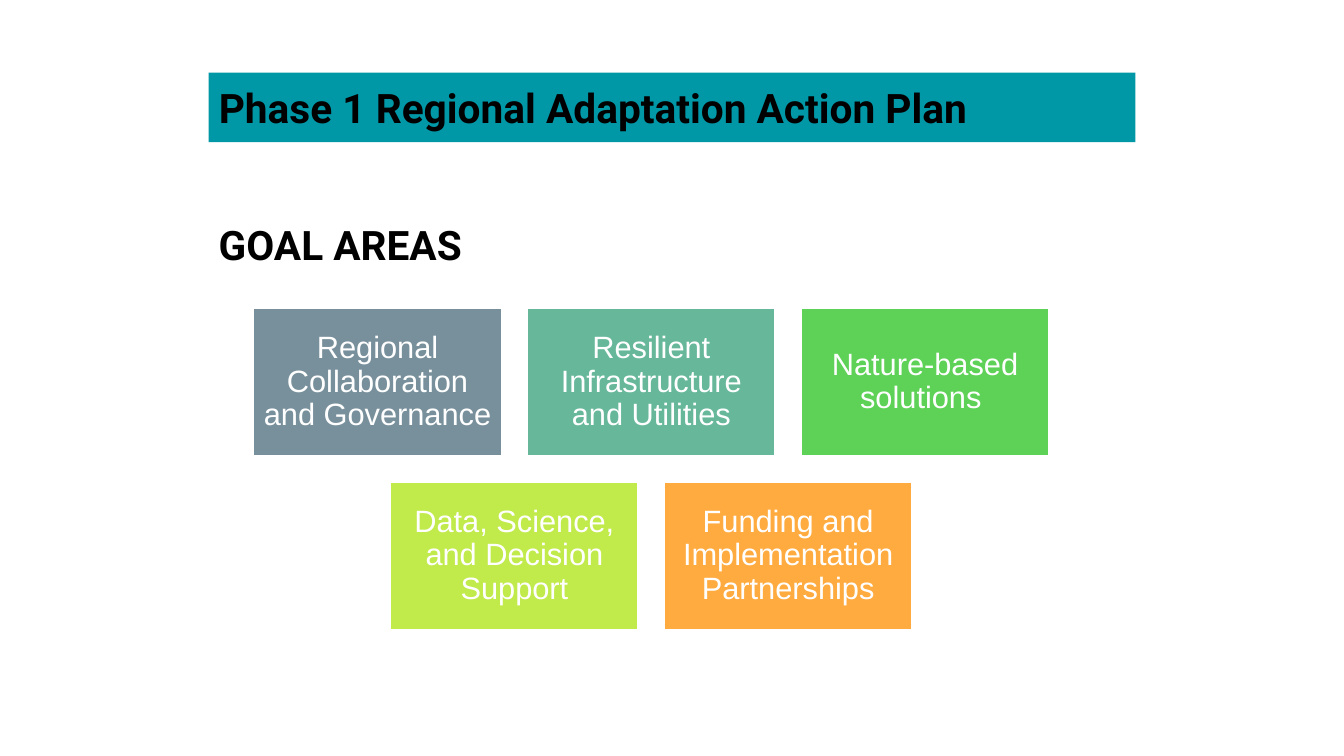
from pptx import Presentation
from pptx.dml.color import RGBColor
from pptx.enum.shapes import MSO_SHAPE
from pptx.enum.text import MSO_ANCHOR, PP_ALIGN
from pptx.util import Inches, Pt

BLACK = RGBColor(0x00, 0x00, 0x00)
WHITE = RGBColor(0xFF, 0xFF, 0xFF)
TEAL = RGBColor(0x00, 0x97, 0xA7)
SLATE = RGBColor(0x78, 0x90, 0x9C)
SEA_GREEN = RGBColor(0x67, 0xB8, 0x9B)
GREEN = RGBColor(0x5E, 0xD2, 0x57)
LIME = RGBColor(0xC1, 0xEA, 0x4B)
ORANGE = RGBColor(0xFF, 0xAB, 0x40)

TITLE = "Phase 1 Regional Adaptation Action Plan"
SUBTITLE = "GOAL AREAS"
GOAL_ROWS = [
    [
        ("Regional Collaboration and Governance", SLATE),
        ("Resilient Infrastructure and Utilities", SEA_GREEN),
        ("Nature-based solutions ", GREEN),
    ],
    [
        ("Data, Science, and Decision Support", LIME),
        ("Funding and Implementation Partnerships", ORANGE),
    ],
]

HEADING_LEFT, HEADING_WIDTH, HEADING_HEIGHT = 2.07, 9.19, 0.69
GOAL_WIDTH, GOAL_HEIGHT, GOAL_GAP = 2.47, 1.48, 0.245
GOAL_CENTER, GOAL_TOP = 6.46, 3.05


def write_text(box, text, font_name, size, color, bold, align, anchor, inset):
    frame = box.text_frame
    frame.word_wrap = True
    frame.vertical_anchor = anchor
    frame.margin_left = frame.margin_right = Inches(inset)
    frame.margin_top = frame.margin_bottom = Inches(inset)
    para = frame.paragraphs[0]
    para.alignment = align
    span = para.add_run()
    span.text = text
    span.font.name = font_name
    span.font.size = Pt(size)
    span.font.bold = bold
    span.font.color.rgb = color
    return para


def place_heading(box, text, top):
    box.left, box.top = Inches(HEADING_LEFT), Inches(top)
    box.width, box.height = Inches(HEADING_WIDTH), Inches(HEADING_HEIGHT)
    write_text(box, text, "Roboto", 29, BLACK, True, PP_ALIGN.LEFT, MSO_ANCHOR.TOP, 0.1)


def add_goal(page, text, color, left, top):
    box = page.shapes.add_shape(
        MSO_SHAPE.RECTANGLE, Inches(left), Inches(top), Inches(GOAL_WIDTH), Inches(GOAL_HEIGHT)
    )
    box.shadow.inherit = False
    box.fill.solid()
    box.fill.fore_color.rgb = color
    box.line.color.rgb = WHITE
    box.line.width = Pt(2)
    para = write_text(
        box, text, "Arial", 22, WHITE, False, PP_ALIGN.CENTER, MSO_ANCHOR.MIDDLE, 0.09
    )
    para.line_spacing = 0.9


def main():
    deck = Presentation()
    deck.slide_width, deck.slide_height = Inches(13.33), Inches(7.5)
    page = deck.slides.add_slide(deck.slide_layouts[5])

    title = page.shapes.title
    place_heading(title, TITLE, 0.72)
    title.fill.solid()
    title.fill.fore_color.rgb = TEAL

    subtitle = page.shapes.add_textbox(0, 0, 0, 0)
    place_heading(subtitle, SUBTITLE, 2.08)

    for row, goals in enumerate(GOAL_ROWS):
        row_width = len(goals) * (GOAL_WIDTH + GOAL_GAP) - GOAL_GAP
        row_left = GOAL_CENTER - row_width / 2
        top = GOAL_TOP + row * (GOAL_HEIGHT + GOAL_GAP)
        for column, (text, color) in enumerate(goals):
            add_goal(page, text, color, row_left + column * (GOAL_WIDTH + GOAL_GAP), top)

    deck.save("out.pptx")


if __name__ == "__main__":
    main()
